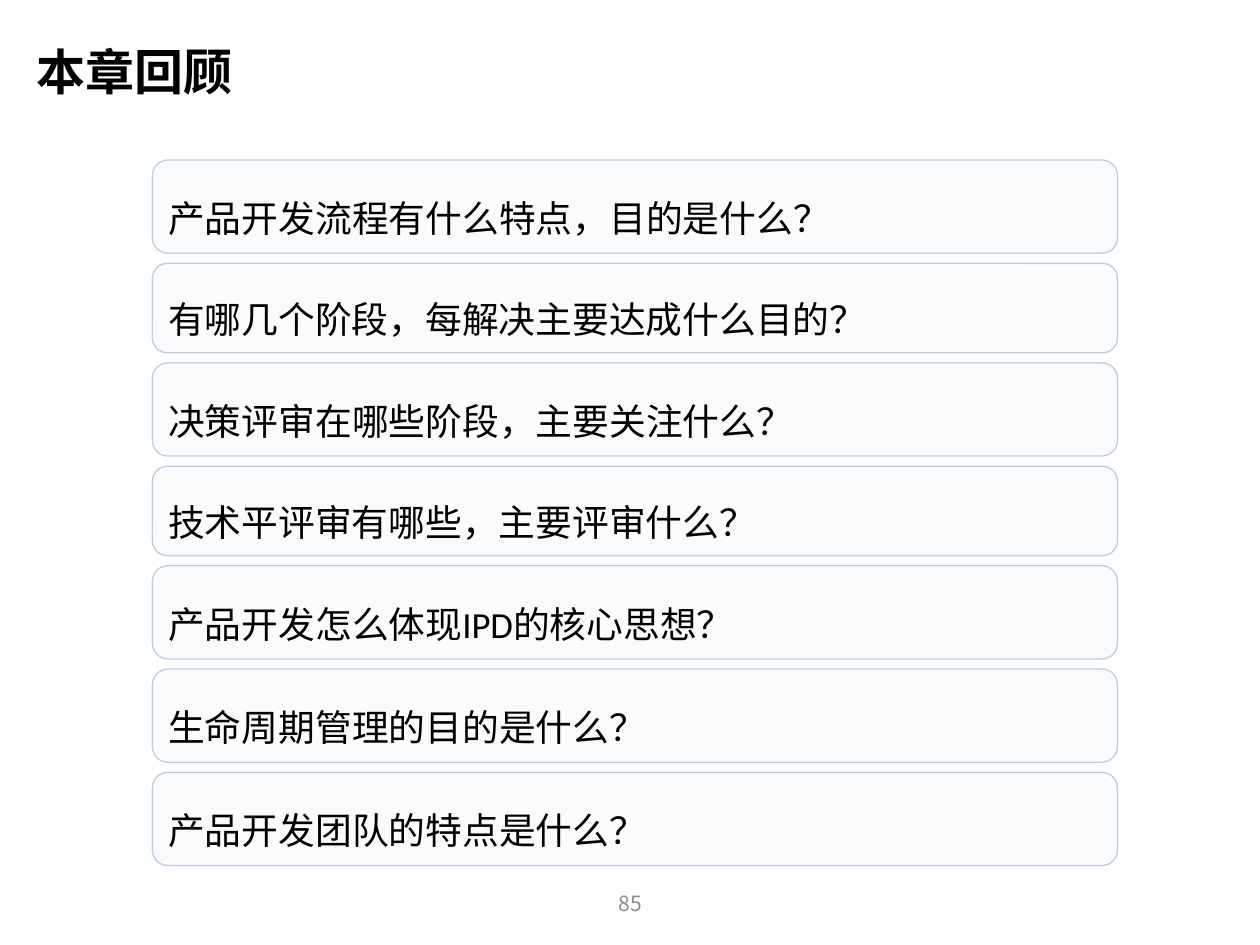
from dataclasses import dataclass

import pptx
import pptx.dml.color
import pptx.enum.shapes
import pptx.enum.text
import pptx.oxml
import pptx.oxml.ns
import pptx.util
from pptx.util import Inches

CJK_FONT = "Noto Sans CJK SC"
ALIGN = pptx.enum.text.PP_ALIGN
GAP = 0.08


@dataclass
class TextStyle:
    size: float
    font: str = CJK_FONT
    color: str = "000000"
    bold: bool = False
    align: ALIGN = ALIGN.LEFT
    spacing: float = 1.0
    hanging: float = 0.0


@dataclass
class Question:
    text: str
    height: float = 0.74


TITLE = TextStyle(28, bold=True, spacing=0.9)
BODY = TextStyle(21, font="Calibri", spacing=1.5, hanging=0.44)
NUMBER = TextStyle(12, color="8C8C8C", align=ALIGN.CENTER)

QUESTIONS = [
    Question("产品开发流程有什么特点，目的是什么？"),
    Question("有哪几个阶段，每解决主要达成什么目的？", 0.71),
    Question("决策评审在哪些阶段，主要关注什么？"),
    Question("技术平评审有哪些，主要评审什么？", 0.71),
    Question("产品开发怎么体现IPD的核心思想？"),
    Question("生命周期管理的目的是什么？"),
    Question("产品开发团队的特点是什么？"),
]


def rgb(value: str) -> pptx.dml.color.RGBColor:
    return pptx.dml.color.RGBColor.from_string(value)


def set_attributes(target, values: dict) -> None:
    for name, value in values.items():
        setattr(target, name, value)


def write_text(sp, text: str, style: TextStyle) -> None:
    tf = sp.text_frame
    set_attributes(tf, {
        "word_wrap": True,
        "vertical_anchor": pptx.enum.text.MSO_ANCHOR.MIDDLE,
        "margin_left": Inches(0.09), "margin_right": Inches(0.09),
        "margin_top": Inches(0.04), "margin_bottom": Inches(0.04),
    })
    p = tf.paragraphs[0]
    set_attributes(p, {"alignment": style.align, "line_spacing": style.spacing})
    if style.hanging:
        pPr = p._p.get_or_add_pPr()
        pPr.set("marL", str(Inches(style.hanging)))
        pPr.set("indent", str(-Inches(style.hanging)))
    r = p.add_run()
    r.text = text
    set_attributes(r.font, {"size": pptx.util.Pt(style.size),
                            "name": style.font, "bold": style.bold})
    r.font.color.rgb = rgb(style.color)
    # East Asian characters take their typeface from a:ea
    ea = pptx.oxml.parse_xml(
        f'<a:ea {pptx.oxml.ns.nsdecls("a")} typeface="{CJK_FONT}"/>')
    r.font._element.find(pptx.oxml.ns.qn("a:latin")).addnext(ea)


def add_label(s, text: str, left: float, top: float, width: float,
              height: float, style: TextStyle) -> None:
    sp = s.shapes.add_textbox(*map(Inches, (left, top, width, height)))
    write_text(sp, text, style)


def add_question(s, question: Question, top: float) -> None:
    sp = s.shapes.add_shape(
        pptx.enum.shapes.MSO_SHAPE.ROUNDED_RECTANGLE,
        *map(Inches, (1.21, top, 7.66, question.height)))
    sp.shadow.inherit = False
    sp.fill.solid()
    sp.fill.fore_color.rgb = rgb("DCE6F2")
    color = sp._element.spPr.find(".//" + pptx.oxml.ns.qn("a:srgbClr"))
    color.append(pptx.oxml.parse_xml(
        f'<a:alpha {pptx.oxml.ns.nsdecls("a")} val="14000"/>'))
    sp.line.color.rgb = rgb("B9CDE5")
    sp.line.width = pptx.util.Pt(0.75)
    write_text(sp, question.text, BODY)


def main() -> None:
    prs = pptx.Presentation()
    set_attributes(prs, {"slide_width": Inches(10), "slide_height": Inches(7.5)})
    s = prs.slides.add_slide(prs.slide_layouts[6])
    add_label(s, "本章回顾", 0.2, 0.28, 9.14, 0.63, TITLE)
    top = 1.27
    for question in QUESTIONS:
        add_question(s, question, top)
        top += question.height + GAP
    add_label(s, "85", 3.88, 6.97, 2.25, 0.4, NUMBER)
    prs.save("out.pptx")


if __name__ == "__main__":
    main()
